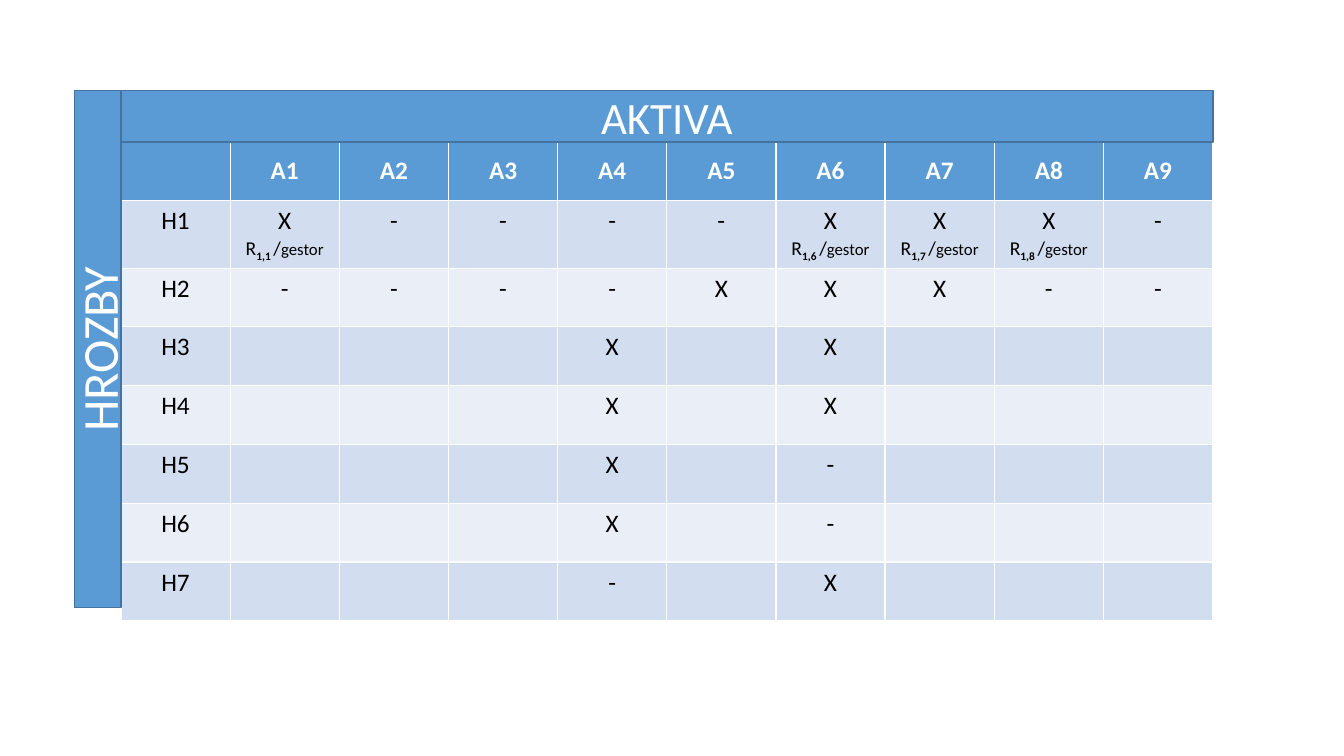
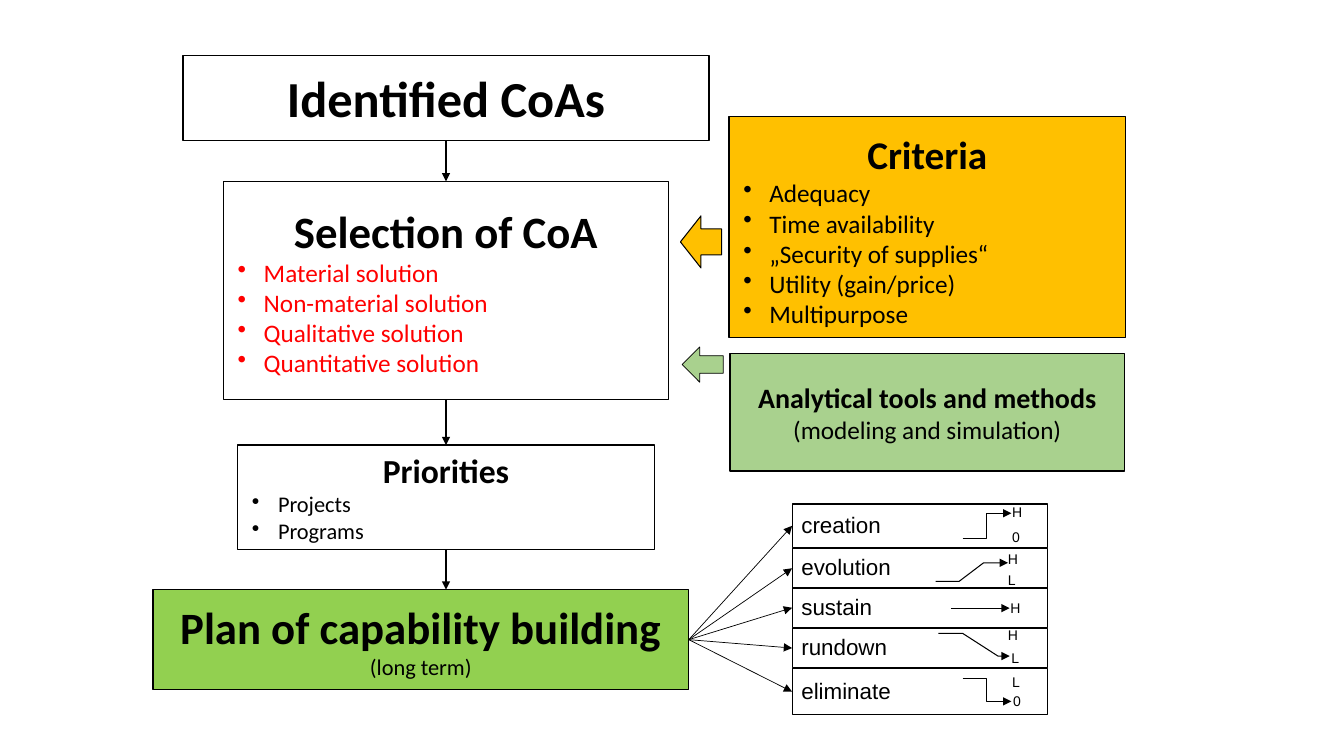
import pptx
import pptx.util
import pptx.dml.color
import pptx.enum.shapes
import pptx.enum.text
import pptx.oxml.ns
from lxml import etree

RGBColor = pptx.dml.color.RGBColor
BLUE = RGBColor(0x5B, 0x9B, 0xD5)
NAVY = RGBColor(0x43, 0x73, 0x9E)
BANDS = [RGBColor(0xEA, 0xEF, 0xF7), RGBColor(0xD2, 0xDE, 0xEF)]
WHITE = RGBColor(0xFF, 0xFF, 0xFF)
BLACK = RGBColor(0, 0, 0)
RED = RGBColor(0xFF, 0, 0)
GOLD = RGBColor(0xFF, 0xC0, 0)
LIME = RGBColor(0x92, 0xD0, 0x50)
SAGE = RGBColor(0xA9, 0xD1, 0x8E)

Pt = pptx.util.Pt
qn = pptx.oxml.ns.qn
MSO = pptx.enum.shapes.MSO_SHAPE
LINE = pptx.enum.shapes.MSO_CONNECTOR.STRAIGHT
MIDDLE = pptx.enum.text.MSO_ANCHOR.MIDDLE
CENTER = pptx.enum.text.PP_ALIGN.CENTER
LEFT = pptx.enum.text.PP_ALIGN.LEFT

deck = pptx.Presentation()
deck.slide_width = pptx.util.Inches(13.33)
deck.slide_height = pptx.util.Inches(7.5)

# Grid of 160 columns and 90 rows
COL = deck.slide_width / 160
ROW = deck.slide_height / 90
WIDE, SLIM = (1.7, 0.8), (1.1, 0.5)  # text margins


def box(page, place, fill, lines=(), edge=BLACK, thick=1, kind=MSO.RECTANGLE,
        face="Calibri", pad=WIDE):
    """Add a shape; each line is text, size, look and colour."""
    x, y, w, h = place
    shape = page.shapes.add_shape(
        kind, round(x * COL), round(y * ROW), round(w * COL), round(h * ROW))
    shape.shadow.inherit = False
    if fill is None:
        shape.fill.background()
    else:
        shape.fill.solid()
        shape.fill.fore_color.rgb = fill
    shape.line.color.rgb = edge
    shape.line.width = Pt(thick)
    frame = shape.text_frame
    frame.word_wrap = True
    frame.vertical_anchor = MIDDLE
    frame.margin_left = frame.margin_right = round(pad[0] * COL)
    frame.margin_top = frame.margin_bottom = round(pad[1] * ROW)
    for i, (text, size, look, ink) in enumerate(lines):
        para = frame.add_paragraph() if i else frame.paragraphs[0]
        para.text = text
        para.alignment = CENTER if look in ("title", "note") else LEFT
        if look == "item":
            props = para._p.get_or_add_pPr()
            props.set("marL", str(round(3.1 * COL)))
            props.set("indent", str(round(-3.1 * COL)))
            etree.SubElement(props, qn("a:buChar")).set("char", "•")
        para.font.name = face
        para.font.size = Pt(size)
        para.font.bold = look == "title"
        para.font.color.rgb = ink
    return shape


def arrow(shape, thick):
    """Give an open line its colour, width and arrowhead."""
    shape.line.color.rgb = BLACK
    shape.line.width = Pt(thick)
    props = shape._element.spPr
    etree.SubElement(props.find(qn("a:ln")), qn("a:tailEnd")).set("type", "triangle")
    if props.find(qn("a:effectLst")) is None:
        etree.SubElement(props, qn("a:effectLst"))


# Slide 1: matrix of threats and assets
page = deck.slides.add_slide(deck.slide_layouts[6])
MARKS = ["X----XXX-", "----XXX--", "   X X   ", "   X X   ",
         "   X -   ", "   X -   ", "   - X   "]
wide, high = 13, 7
grid = page.shapes.add_table(
    8, 10, round(14.4 * COL), round(16.9 * ROW),
    round(10 * wide * COL), round(8 * high * ROW)).table
for r in range(8):
    for c in range(10):
        cell = grid.cell(r, c)
        cell.fill.solid()
        cell.fill.fore_color.rgb = BANDS[r % 2] if r else BLUE
        if r == 0:
            text = f"A{c}" if c else ""
            cell.vertical_anchor = MIDDLE
        else:
            text = MARKS[r - 1][c - 1].strip() if c else f"H{r}"
        para = cell.text_frame.paragraphs[0]
        para.text = text
        para.alignment = CENTER
        para.font.name = "Calibri"
        para.font.size = Pt(18)
        para.font.bold = r == 0
        para.font.color.rgb = BLACK if r else WHITE
        # Risk and its owner under each mark of the first row
        if r == 1 and text == "X":
            para = cell.text_frame.add_paragraph()
            para.alignment = CENTER
            para.font.name = "Calibri"
            para.font.color.rgb = BLACK
            for part, size, low in [("R", 14, False), (f"{r},{c} ", 14, True),
                                    ("/", 14, False), ("gestor", 12, False)]:
                run = para.add_run()
                run.text = part
                run.font.size = Pt(size)
                run.font.bold = low
                if low:
                    run._r.get_or_add_rPr().set("baseline", "-25000")

side = box(page, (8.9, 10.8, 5.5, 61.5), BLUE, [("HROZBY", 36, "note", WHITE)],
           NAVY, pad=SLIM)
side.text_frame._txBody.bodyPr.set("vert", "vert270")
box(page, (14.4, 10.8, 10 * wide, 6.1), BLUE, [("AKTIVA", 32, "note", WHITE)],
    NAVY, pad=SLIM)

# Slide 2: from courses of action to the plan
page = deck.slides.add_slide(deck.slide_layouts[6])
MID = 53.1
found = box(page, (MID - 31.3, 6.6, 62.6, 10.1), WHITE,
            [("Identified CoAs", 36, "title", BLACK)])
choice = box(page, (MID - 26.5, 21.6, 53, 26), WHITE,
             [("Selection of CoA", 32, "title", BLACK)]
             + [(f"{name} solution", 18, "item", RED) for name in
                ("Material", "Non-material", "Qualitative", "Quantitative")])
ranks = box(page, (MID - 24.8, 53, 49.6, 12.4), WHITE,
            [("Priorities", 24, "title", BLACK),
             ("Projects", 16, "item", BLACK), ("Programs", 16, "item", BLACK)])
plan = box(page, (18.2, 70.2, 63.8, 11.9), LIME,
           [("Plan of capability building", 32, "title", BLACK),
            ("(long term)", 16, "note", BLACK)])
rules = box(page, (86.8, 13.9, 47.2, 26.3), GOLD,
            [("Criteria", 28, "title", BLACK)]
            + [(name, 18, "item", BLACK) for name in
               ("Adequacy", "Time availability", "„Security of supplies“",
                "Utility (gain/price)", "Multipurpose")])
rules.text_frame.margin_top = round(1.4 * ROW)
box(page, (86.9, 42.1, 47, 14), SAGE,
    [("Analytical tools and methods", 20, "title", BLACK),
     ("(modeling and simulation)", 18, "note", BLACK)])

# Block arrows into the selection
box(page, (81, 25.7, 4.9, 6.2), GOLD, thick=0.75, kind=MSO.LEFT_ARROW)
box(page, (81.2, 41.3, 4.9, 4.2), SAGE, thick=0.5, kind=MSO.LEFT_ARROW)

# Arrows down the main chain
for start, end in [(found, choice), (choice, ranks), (ranks, None)]:
    link = page.shapes.add_connector(
        LINE, 0, 0, round(MID * COL), round(70.2 * ROW))
    link.begin_connect(start, 2)
    if end is not None:
        link.end_connect(end, 0)
    arrow(link, 1.5)

# Actions: name, top, height, course of the level, labels
ACTS = [
    ("creation", 60, 5.2,
     [(114.6, 64.1), (117.5, 64.1), (117.5, 61.1), (120.4, 61.1)],
     [("0", 119.4, 62.6), ("H", 119.4, 59.6)]),
    ("evolution", 65.3, 4.7,
     [(111.4, 69.2), (114.2, 69.2), (117.1, 67), (120, 67)],
     [("L", 118.9, 67.7), ("H", 118.9, 65.2)]),
    ("sustain", 70, 4.7, [(113.2, 72.4), (120.2, 72.4)],
     [("H", 119.2, 71)]),
    ("rundown", 74.8, 4.7,
     [(111.7, 75.4), (114.6, 75.4), (118.8, 78.1), (120.2, 78.1)],
     [("L", 119.3, 77), ("H", 118.9, 74.2)]),
    ("eliminate", 79.6, 5.5,
     [(114.6, 80.8), (117.5, 80.8), (117.5, 83.5), (120.4, 83.5)],
     [("0", 119.5, 82.1), ("L", 119.4, 79.8)]),
]
for name, top, tall, course, labels in ACTS:
    act = box(page, (94.3, top, 30.4, tall), None, [(name, 16, "plain", BLACK)],
              thick=0.75, face="Arial", pad=SLIM)
    act.text_frame.paragraphs[0].line_spacing = 0.94

    dots = [(round(x * COL), round(y * ROW)) for x, y in course]
    if len(dots) == 2:
        trend = page.shapes.add_connector(LINE, *dots[0], *dots[1])
    else:
        pen = page.shapes.build_freeform(*dots[0])
        pen.add_line_segments(dots[1:], close=False)
        trend = pen.convert_to_shape()
        trend.shadow.inherit = False
        trend.fill.background()
    arrow(trend, 0.75)

    for text, x, y in labels:
        frame = page.shapes.add_textbox(
            round(x * COL), round(y * ROW), round(5.7 * COL), round(2.9 * ROW)).text_frame
        frame.word_wrap = True
        frame.margin_left = frame.margin_right = round(SLIM[0] * COL)
        frame.margin_top = frame.margin_bottom = round(SLIM[1] * ROW)
        para = frame.paragraphs[0]
        para.text = text
        para.line_spacing = 0.94
        para.font.name = "Arial"
        para.font.size = Pt(10)
        para.font.color.rgb = BLACK

    link = page.shapes.add_connector(LINE, 0, 0, 0, 0)
    link.begin_connect(plan, 3)
    link.end_connect(act, 1)
    arrow(link, 0.5)

deck.save("out.pptx")
